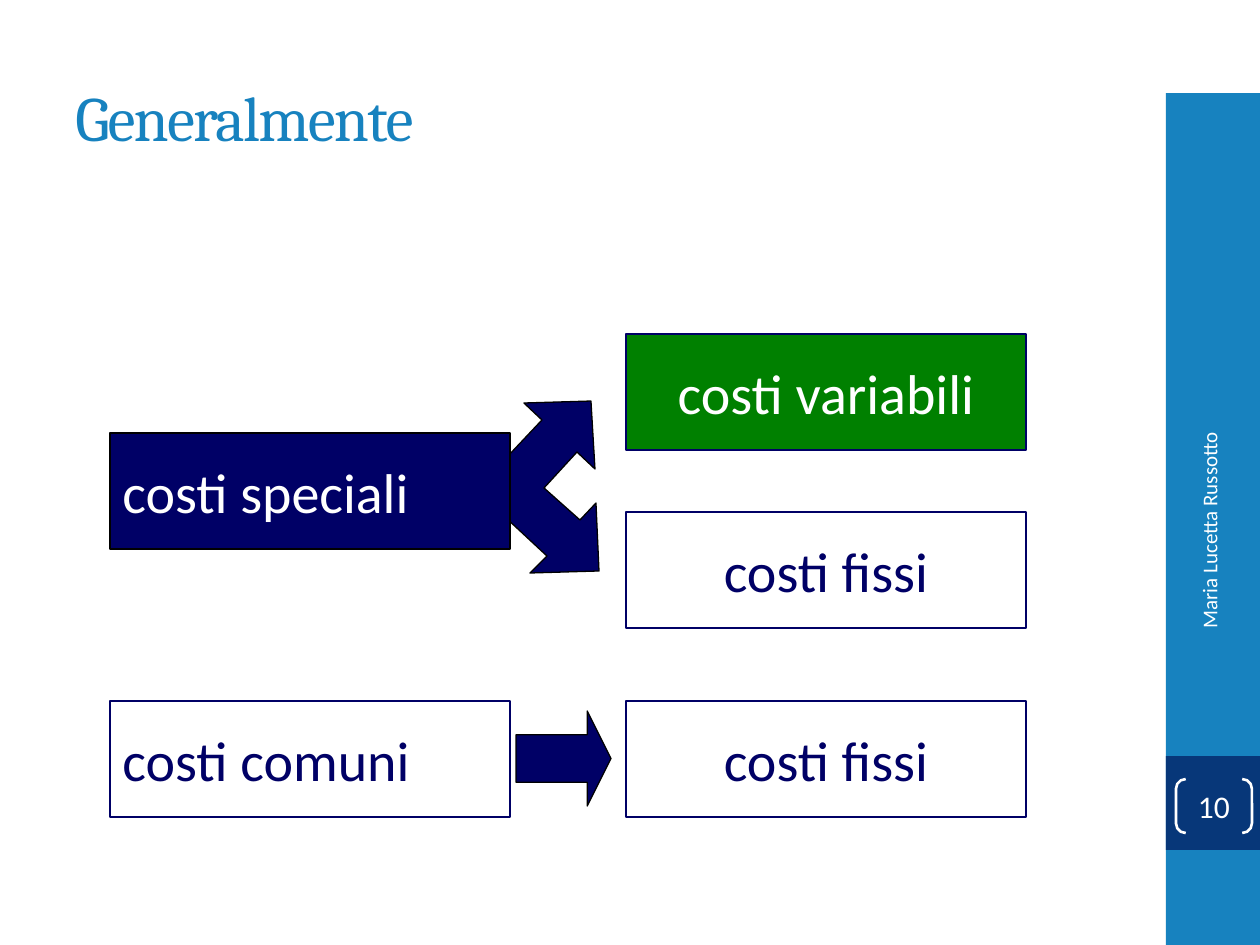
from pptx import Presentation
from pptx.dml.color import RGBColor
from pptx.enum.shapes import MSO_SHAPE
from pptx.enum.text import MSO_ANCHOR, PP_ALIGN
from pptx.util import Emu, Pt

RECTANGLE = MSO_SHAPE.RECTANGLE
RIGHT_ARROW = MSO_SHAPE.RIGHT_ARROW
BRACKETS = MSO_SHAPE.DOUBLE_BRACKET
MIDDLE = MSO_ANCHOR.MIDDLE
LEFT, CENTER, RIGHT = PP_ALIGN.LEFT, PP_ALIGN.CENTER, PP_ALIGN.RIGHT

BLUE = RGBColor(0x17, 0x82, 0xBF)
DARK_BLUE = RGBColor(0x07, 0x37, 0x79)
NAVY = RGBColor(0x00, 0x00, 0x66)
GREEN = RGBColor(0x00, 0x80, 0x00)
WHITE = RGBColor(0xFF, 0xFF, 0xFF)
BLACK = RGBColor(0x00, 0x00, 0x00)

PX_PER_INCH = 126
COST_WIDTH, COST_HEIGHT = 400, 116
FORK_POINTS = [(123, 170), (120, 102), (104, 119), (68, 87), (101, 51), (119, 68),
               (115, 0), (48, 2), (66, 19), (0, 89), (71, 155), (54, 172)]


def px(length):
    return Emu(round(length * 914400 / PX_PER_INCH))


def paint(shape, fill=None, line=None, weight=0.75):
    shape.shadow.inherit = False
    if fill is None:
        shape.fill.background()
    else:
        shape.fill.solid()
        shape.fill.fore_color.rgb = fill
    if line is None:
        shape.line.fill.background()
    else:
        shape.line.color.rgb = line
        shape.line.width = Pt(weight)


def add_shape(page, kind, box, fill=None, line=None, weight=0.75):
    shape = page.shapes.add_shape(kind, *map(px, box))
    paint(shape, fill, line, weight)
    return shape


def write(shape, text, size, color, align=LEFT, font="Calibri"):
    frame = shape.text_frame
    frame.word_wrap = True
    frame.vertical_anchor = MIDDLE
    para = frame.paragraphs[0]
    para.alignment = align
    para.font.name = font
    para.font.size = Pt(size)
    para.font.color.rgb = color
    span = para.add_run()
    span.text = text
    return span


def add_title(page, box, text):
    title = page.shapes.add_textbox(*map(px, box))
    span = write(title, text, 36, BLUE, font="Cambria")
    span._r.get_or_add_rPr().set("spc", "-100")


def add_sidebar(page, box, author, number):
    left, top, width, height = box
    add_shape(page, RECTANGLE, box, BLUE)
    add_shape(page, RECTANGLE, (left, top + 663, width, width), DARK_BLUE)
    label = page.shapes.add_textbox(*map(px, (left - 120, top + 465, 326, 50)))
    label.rotation = 270
    write(label, author, 12, WHITE, RIGHT)
    badge = add_shape(page, BRACKETS, (left + 10, top + 686, 76, 54), line=WHITE, weight=1.5)
    badge.adjustments[0] = 0.18
    frame = badge.text_frame
    frame.margin_left = frame.margin_right = frame.margin_top = frame.margin_bottom = 0
    write(badge, number, 18, WHITE, CENTER)


def add_fork_arrow(page, left, top):
    points = [(px(left + x), px(top + y)) for x, y in FORK_POINTS]
    builder = page.shapes.build_freeform(*points[0], scale=1.0)
    builder.add_line_segments(points[1:], close=True)
    paint(builder.convert_to_shape(), NAVY, BLACK)


def add_cost_diagram(page, left, top):
    right = left + 516
    add_shape(page, RIGHT_ARROW, (left + 406, top + 377, 95, 95), NAVY, BLACK).adjustments[1] = 0.25
    add_fork_arrow(page, left + 366, top + 67)
    costs = [
        ("costi comuni", left, 367, WHITE, NAVY, NAVY, LEFT),
        ("costi speciali", left, 99, NAVY, BLACK, WHITE, LEFT),
        ("costi variabili", right, 0, GREEN, NAVY, WHITE, CENTER),
        ("costi fissi", right, 178, WHITE, NAVY, NAVY, CENTER),
        ("costi fissi", right, 367, WHITE, NAVY, NAVY, CENTER),
    ]
    for text, x, y, fill, line, color, align in costs:
        cost = add_shape(page, RECTANGLE, (x, top + y, COST_WIDTH, COST_HEIGHT), fill, line)
        write(cost, text, 32, color, align)


def main():
    deck = Presentation()
    deck.slide_width, deck.slide_height = px(1260), px(945)
    page = deck.slides.add_slide(deck.slide_layouts[6])
    add_sidebar(page, (1166, 93, 94, 852), "Maria Lucetta Russotto", "10")
    add_title(page, (63, 38, 1050, 157), "Generalmente")
    add_cost_diagram(page, 110, 334)
    deck.save("out.pptx")


if __name__ == "__main__":
    main()
